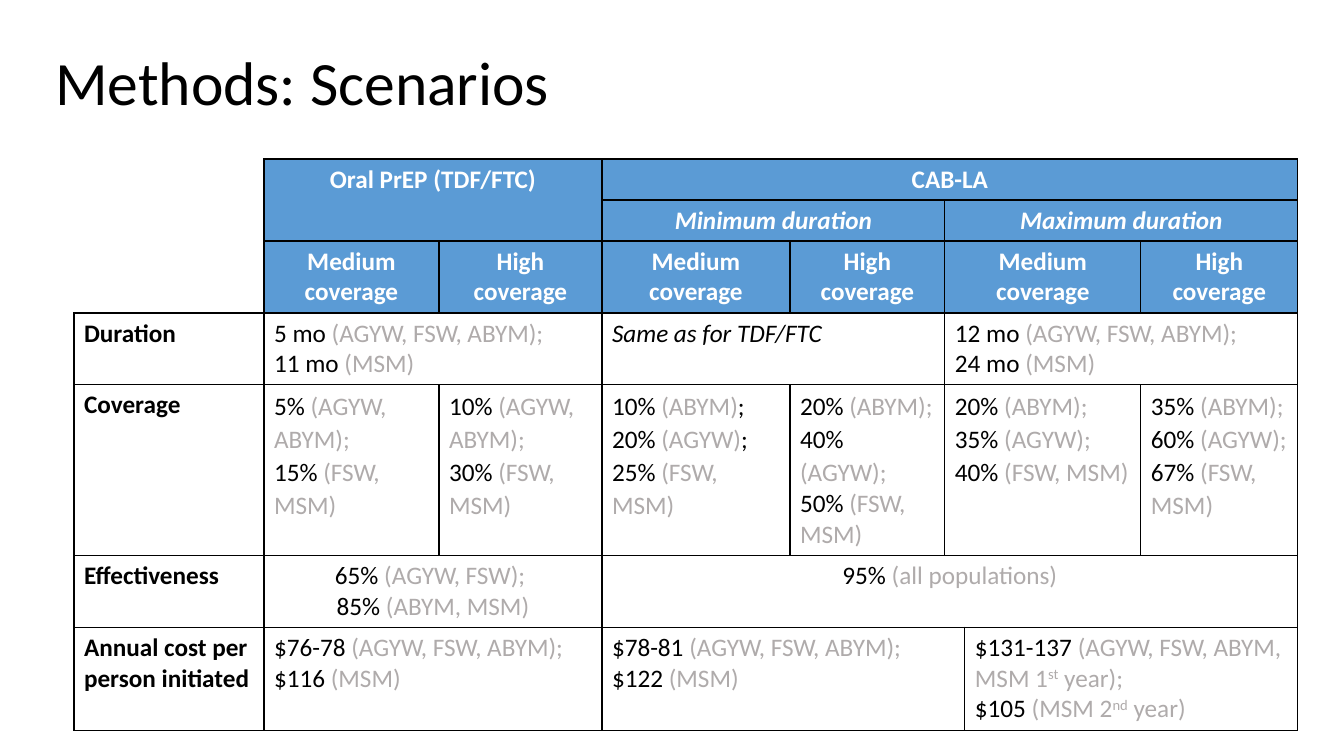
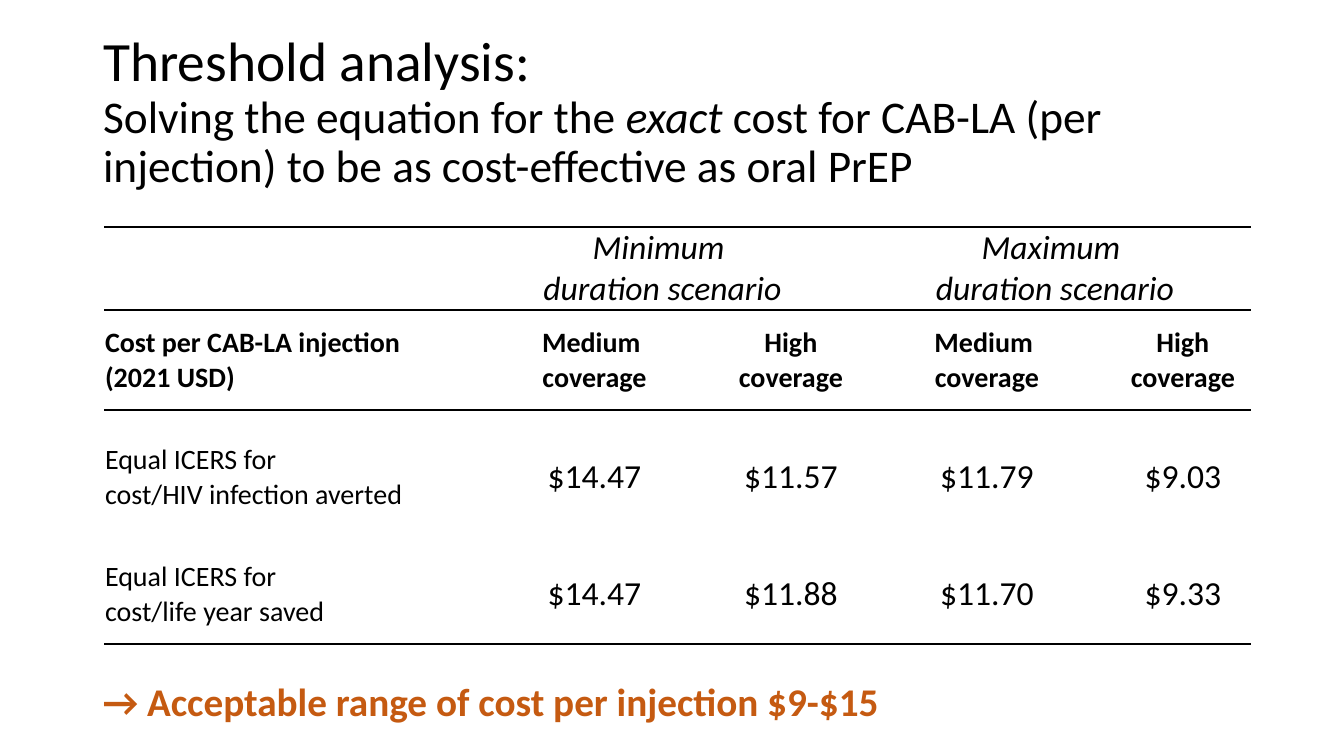
from lxml import etree
from pptx import Presentation
from pptx.dml.color import RGBColor
from pptx.enum.text import MSO_ANCHOR, MSO_AUTO_SIZE, PP_ALIGN
from pptx.oxml.ns import qn
from pptx.util import Emu, Pt

LEFT, CENTER = PP_ALIGN.LEFT, PP_ALIGN.CENTER
MIDDLE, BOTTOM, TOP = MSO_ANCHOR.MIDDLE, MSO_ANCHOR.BOTTOM, MSO_ANCHOR.TOP
NO_AUTOFIT = MSO_AUTO_SIZE.NONE
EMU_PER_PX = 914400 / 100.8
FONT = "Calibri"
BLACK, WHITE, GREY, BLUE, ORANGE = "000000", "FFFFFF", "AFABAB", "5B9BD5", "C55A11"

# Inline marks toggle a style: | grey, ^ superscript, _ italic
MARKS = "|^_"

# Scenarios: title as (text, size) lines; cells as (column, row span, column span, text)
SCENARIO_TITLE = [("Methods: Scenarios", 44)]
SCENARIO_COLUMNS = [190, 175, 163, 188, 155, 20, 176, 157]
SCENARIO_HEIGHTS = [41, 41, 72, 71, 171, 71, 103]
HEADER_ROWS = 3
COVERAGE_ROW, EFFECTIVENESS_ROW = 4, 5
MEDIUM, HIGH = "Medium\ncoverage", "High\ncoverage"
SCENARIO_ROWS = [
    [(1, 2, 2, "Oral PrEP (TDF/FTC)"), (3, 1, 5, "CAB-LA")],
    [(3, 1, 2, "_Minimum duration_"), (5, 1, 3, "_Maximum duration_")],
    [(1, 1, 1, MEDIUM), (2, 1, 1, HIGH), (3, 1, 1, MEDIUM),
     (4, 1, 1, HIGH), (5, 1, 2, MEDIUM), (7, 1, 1, HIGH)],
    [(0, 1, 1, "Duration"),
     (1, 1, 2, "5 mo |(AGYW, FSW, ABYM);\n11 mo| (MSM)"),
     (3, 1, 2, "_Same as for TDF/FTC_"),
     (5, 1, 3, "12 mo |(AGYW, FSW, ABYM);\n24 mo |(MSM)")],
    [(0, 1, 1, "Coverage"),
     (1, 1, 1, "5% |(AGYW, ABYM);\n15% |(FSW, MSM)"),
     (2, 1, 1, "10% |(AGYW, ABYM);\n30% |(FSW, MSM)"),
     (3, 1, 1, "10% |(ABYM)|;\n20% |(AGYW)|;\n25% |(FSW, MSM)"),
     (4, 1, 1, "20% |(ABYM);\n40% |(AGYW);\n50% |(FSW, MSM)"),
     (5, 1, 2, "20% |(ABYM);\n35% |(AGYW);\n40% |(FSW, MSM)"),
     (7, 1, 1, "35% |(ABYM);\n60% |(AGYW);\n67% |(FSW, MSM)")],
    [(0, 1, 1, "Effectiveness"),
     (1, 1, 2, "65% |(AGYW, FSW); \n85% |(ABYM, MSM)"),
     (3, 1, 5, "95% |(all populations)")],
    [(0, 1, 1, "Annual cost per person initiated"),
     (1, 1, 2, "$76-78| (AGYW, FSW, ABYM); |$116 |(MSM)"),
     (3, 1, 3, "$78-81| (AGYW, FSW, ABYM);| $122 |(MSM)"),
     (6, 1, 2, "$131-137 |(AGYW, FSW, ABYM, MSM 1^st^ year);\n$105 |(MSM 2^nd^ year)")],
]
TIGHT_CELL = (COVERAGE_ROW, 4)  # its last paragraph keeps single spacing

# Threshold analysis
THRESHOLD_TITLE = [
    ("Threshold analysis:", 39.6),
    ("Solving the equation for the _exact_ cost for CAB-LA (per injection) "
     "to be as cost-effective as oral PrEP", 32.4),
]
THRESHOLD_COLUMNS = [362, 257, 136, 256, 136]
THRESHOLD_HEIGHTS = [83, 100, 134, 100]
THRESHOLD_RULES = ["TB", "TB", "T", "B"]
THRESHOLD_ROWS = [
    ["", "_Minimum \nduration scenario_", None, "_Maximum \nduration scenario_", None],
    ["Cost per CAB-LA injection\n(2021 USD)",
     "Medium \ncoverage", HIGH, "Medium \ncoverage", HIGH],
    ["Equal ICERS for\ncost/HIV infection averted", "$14.47", "$11.57", "$11.79", "$9.03"],
    ["Equal ICERS for\ncost/life year saved", "$14.47", "$11.88", "$11.70", "$9.33"],
]
CONCLUSION = "→ Acceptable range of cost per injection $9-$15"


def px(length):
    return Emu(round(length * EMU_PER_PX))


def rgb(color):
    return RGBColor.from_string(color)


def write(text_frame, text, size, color=BLACK, bold=False, align=LEFT):
    """Fill a text frame, one paragraph per line, with a run per style change."""
    active = set()
    for index, line in enumerate(text.split("\n")):
        paragraph = text_frame.paragraphs[0] if index == 0 else text_frame.add_paragraph()
        paragraph.alignment = align
        active.discard("|")
        start = 0
        for end, mark in enumerate(line + MARKS[0]):
            if mark not in MARKS:
                continue
            if end > start:
                run = paragraph.add_run()
                run.text = line[start:end]
                font = run.font
                font.name, font.size = FONT, Pt(size)
                font.bold, font.italic = bold, "_" in active
                font.color.rgb = rgb(GREY if "|" in active else color)
                if "^" in active:
                    run._r.get_or_add_rPr().set("baseline", "30000")
            start = end + 1
            active ^= {mark}


def add_titled_slide(presentation, lines, left, top):
    slide = presentation.slides.add_slide(presentation.slide_layouts[5])
    title = slide.shapes.title
    title.left, title.top, title.width, title.height = map(px, (left, top, 1159, 146))
    frame = title.text_frame
    frame.word_wrap, frame.auto_size = True, NO_AUTOFIT
    frame.vertical_anchor = MIDDLE
    write(frame, "\n".join(text for text, _ in lines), lines[0][1])
    for paragraph, (_, size) in zip(frame.paragraphs, lines):
        paragraph.line_spacing = 0.9
        for run in paragraph.runs:
            run.font.size = Pt(size)
    return slide


def add_plain_table(slide, left, top, widths, heights):
    frame = slide.shapes.add_table(len(heights), len(widths), px(left), px(top),
                                   px(sum(widths)), px(sum(heights)))
    table = frame.table
    table.first_row = table.horz_banding = False
    for column, width in zip(table.columns, widths):
        column.width = px(width)
    for row, height in zip(table.rows, heights):
        row.height = px(height)
    return table


def style_cell(cell, sides, fill=None):
    """Rule the named sides (L, R, T, B) in black and set the fill."""
    properties = cell._tc.get_or_add_tcPr()
    for side in "LRTB":
        line = etree.SubElement(properties, qn("a:ln" + side), w=str(Pt(1)))
        if side in sides:
            solid = etree.SubElement(line, qn("a:solidFill"))
            etree.SubElement(solid, qn("a:srgbClr"), val=BLACK)
        else:
            etree.SubElement(line, qn("a:noFill"))
    if fill:
        cell.fill.solid()
        cell.fill.fore_color.rgb = rgb(fill)
    else:
        cell.fill.background()


def build_scenarios(presentation):
    slide = add_titled_slide(presentation, SCENARIO_TITLE, 45, 13)
    table = add_plain_table(slide, 74, 159, SCENARIO_COLUMNS, SCENARIO_HEIGHTS)

    # Borders and fills: the empty corner has only its right and lower edges
    for row in range(len(SCENARIO_HEIGHTS)):
        header = row < HEADER_ROWS
        for column in range(len(SCENARIO_COLUMNS)):
            if header and column == 0:
                style_cell(table.cell(row, 0), "RB" if row == HEADER_ROWS - 1 else "R")
            else:
                style_cell(table.cell(row, column), "LRTB", BLUE if header else None)

    # Merges and text
    for row, cells in enumerate(SCENARIO_ROWS):
        header = row < HEADER_ROWS
        for column, row_span, column_span, text in cells:
            cell = table.cell(row, column)
            if row_span * column_span > 1:
                cell.merge(table.cell(row + row_span - 1, column + column_span - 1))
            centred = header or (row == EFFECTIVENESS_ROW and column > 0)
            write(cell.text_frame, text, 18, WHITE if header else BLACK,
                  header or column == 0, CENTER if centred else LEFT)
            if row == COVERAGE_ROW and column > 0:
                loose = 2 if (row, column) == TIGHT_CELL else 3
                for paragraph in cell.text_frame.paragraphs[:loose]:
                    paragraph.line_spacing = 1.07


def build_threshold(presentation):
    slide = add_titled_slide(presentation, THRESHOLD_TITLE, 93, 40)
    table = add_plain_table(slide, 104, 227, THRESHOLD_COLUMNS, THRESHOLD_HEIGHTS)
    for row, texts in enumerate(THRESHOLD_ROWS):
        for column, text in enumerate(texts):
            cell = table.cell(row, column)
            style_cell(cell, THRESHOLD_RULES[row])
            cell.margin_left = cell.margin_top = cell.margin_right = px(1)
            cell.margin_bottom = 0
            cell.vertical_anchor = BOTTOM if row == 0 else MIDDLE
            if text:
                size = 20 if row == 1 or column == 0 else 24
                write(cell.text_frame, text, size, bold=row == 1,
                      align=CENTER if column else LEFT)
    for column in (1, 3):
        table.cell(0, column).merge(table.cell(0, column + 1))

    # Conclusion line
    box = slide.shapes.add_textbox(px(93), px(672), px(818), px(57))
    box.text_frame.word_wrap = True
    box.text_frame.vertical_anchor = TOP
    write(box.text_frame, CONCLUSION, 28, ORANGE, bold=True)


def main():
    presentation = Presentation()
    presentation.slide_width, presentation.slide_height = px(1344), px(756)
    build_scenarios(presentation)
    build_threshold(presentation)
    presentation.save("out.pptx")


if __name__ == "__main__":
    main()
